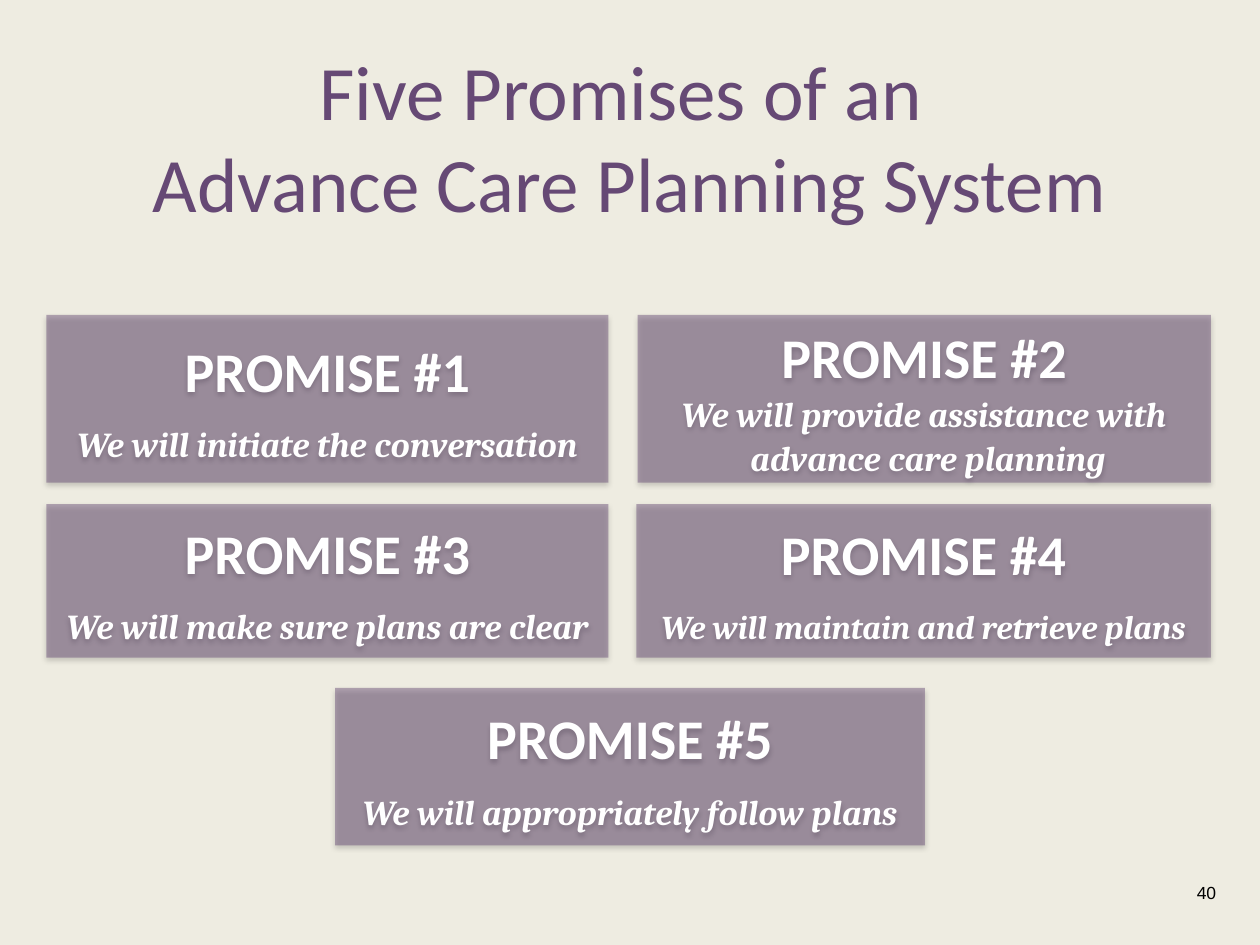
from dataclasses import dataclass

import lxml.etree
import pptx
import pptx.dml.color
import pptx.enum.shapes
import pptx.enum.text
import pptx.oxml.ns
import pptx.util

Pt = pptx.util.Pt
ALIGN = pptx.enum.text.PP_ALIGN
ANCHOR = pptx.enum.text.MSO_ANCHOR
COLORS = {
    "background": "EEECE1",
    "purple": "664975",
    "white": "FFFFFF",
    "black": "000000",
}


@dataclass
class Promise:
    left: float
    top: float
    width: float
    height: float
    lines: list[str]
    size: float = 20
    space_after: float = 10


LEFT, LEFT_WIDTH = 26.6, 321.1
ROW_1, ROW_1_HEIGHT = 180, 95.8
ROW_2, ROW_2_HEIGHT = 288, 87.8

PROMISES = [
    Promise(LEFT, ROW_1, LEFT_WIDTH, ROW_1_HEIGHT, ["We will initiate the conversation"]),
    Promise(364.3, ROW_1, 327.6, ROW_1_HEIGHT,
            ["We will provide assistance with", " advance care planning"], space_after=0),
    Promise(LEFT, ROW_2, LEFT_WIDTH, ROW_2_HEIGHT, ["We will make sure plans are clear"]),
    Promise(363.6, ROW_2, 328.3, ROW_2_HEIGHT, ["We will maintain and retrieve plans"], size=19),
    Promise(191.5, 393.1, 337, 90, ["We will appropriately follow plans"]),
]


def rgb(name: str) -> pptx.dml.color.RGBColor:
    return pptx.dml.color.RGBColor.from_string(COLORS[name])


def add_element(parent, tag: str, **attributes: str):
    element = lxml.etree.SubElement(parent, pptx.oxml.ns.qn(tag))
    for name, value in attributes.items():
        element.set(name, value)
    return element


def format_font(font, name: str, size: float, color: str) -> None:
    font.name = name
    font.size = Pt(size)
    font.color.rgb = rgb(color)


def add_soft_shadow(shape) -> None:
    shape.shadow.inherit = False
    effects = shape._element.spPr.find(pptx.oxml.ns.qn("a:effectLst"))
    shadow = add_element(effects, "a:outerShdw", blurRad="40000", dist="20000",
                         dir="5400000", rotWithShape="0")
    color = add_element(shadow, "a:srgbClr", val=COLORS["black"])
    add_element(color, "a:alpha", val="38000")


def add_promise(slide, number: int, promise: Promise) -> None:
    shape = slide.shapes.add_shape(
        pptx.enum.shapes.MSO_SHAPE.FLOWCHART_PROCESS,
        Pt(promise.left), Pt(promise.top), Pt(promise.width), Pt(promise.height))
    shape.fill.solid()
    shape.fill.fore_color.rgb = rgb("purple")
    fill_color = shape._element.spPr.find(".//" + pptx.oxml.ns.qn("a:srgbClr"))
    add_element(fill_color, "a:alpha", val="45000")
    shape.line.fill.background()
    add_soft_shadow(shape)

    text_frame = shape.text_frame
    text_frame.word_wrap = True
    text_frame.vertical_anchor = ANCHOR.MIDDLE
    text_frame.text = "\n".join([f"PROMISE #{number}", *promise.lines])
    for index, paragraph in enumerate(text_frame.paragraphs):
        paragraph.alignment = ALIGN.CENTER
        paragraph.line_spacing = 1.05
        paragraph.space_after = Pt(promise.space_after)
        font = paragraph.runs[0].font
        font.bold = True
        if index == 0:
            format_font(font, "Calibri", 32, "white")
        else:
            format_font(font, "Cambria", promise.size, "white")
            font.italic = True


def set_title(slide) -> None:
    title = slide.shapes.title
    title.left, title.top, title.width, title.height = Pt(36), Pt(32.4), Pt(648), Pt(90)
    title.text_frame.word_wrap = True
    title.text_frame.vertical_anchor = ANCHOR.MIDDLE
    title.text_frame.text = "Five Promises of an \vAdvance Care Planning System"
    paragraph = title.text_frame.paragraphs[0]
    paragraph.alignment = ALIGN.CENTER
    for run in paragraph.runs:
        format_font(run.font, "Calibri", 44, "purple")


def add_page_number(slide, number: int) -> None:
    box = slide.shapes.add_textbox(Pt(673.9), Pt(500.4), Pt(28.1), Pt(28.8))
    box.text_frame.word_wrap = True
    box.text_frame.text = str(number)
    paragraph = box.text_frame.paragraphs[0]
    paragraph.alignment = ALIGN.RIGHT
    format_font(paragraph.runs[0].font, "Arial", 10, "black")


def main() -> None:
    presentation = pptx.Presentation()
    presentation.slide_width, presentation.slide_height = Pt(720), Pt(540)
    slide = presentation.slides.add_slide(presentation.slide_layouts[5])
    slide.background.fill.solid()
    slide.background.fill.fore_color.rgb = rgb("background")
    set_title(slide)
    for number, promise in enumerate(PROMISES, start=1):
        add_promise(slide, number, promise)
    add_page_number(slide, 40)
    presentation.save("out.pptx")


if __name__ == "__main__":
    main()
